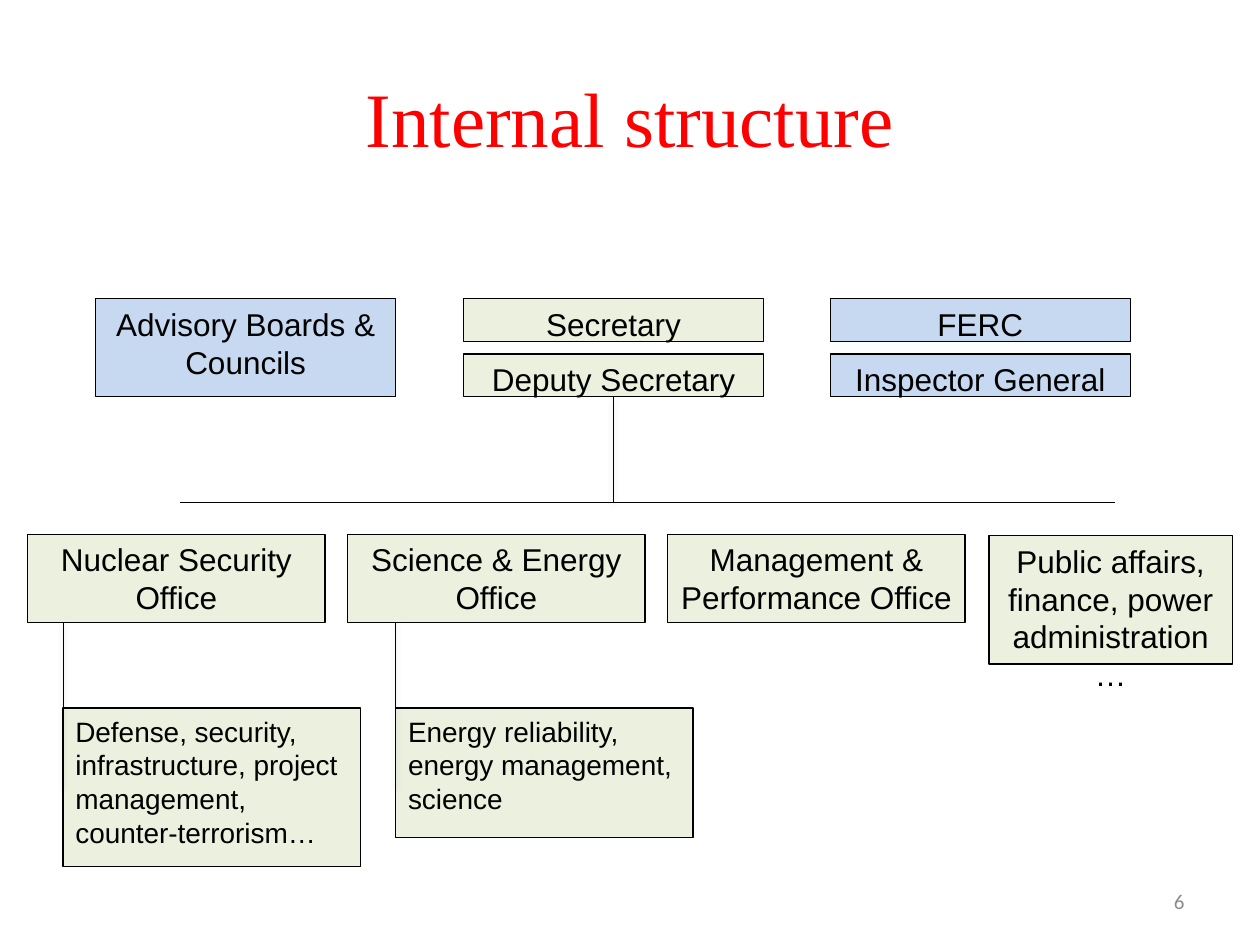
from lxml import etree
from pptx import Presentation
from pptx.dml.color import RGBColor
from pptx.enum import shapes, text
from pptx.oxml import parse_xml
from pptx.oxml.ns import nsdecls
from pptx.util import Inches, Pt

COLORS = {
    "title": "FF0000",
    "ink": "000000",
    "department": "EBF1DE",
    "independent": "C6D9F1",
    "number": "8C8C8C",
}
ALIGN = text.PP_ALIGN
ANCHOR = text.MSO_ANCHOR


class OrgChart:
    """Holds the fonts and colours of the chart and the slide it is drawn on."""

    body_font = "Arial"
    title_font = "Times New Roman"
    number_font = "Calibri"

    def __init__(self, slide):
        self.slide = slide

    def color(self, name):
        return RGBColor.from_string(COLORS[name])

    def set_words(self, shape, words, size, font, color, align, anchor):
        frame = shape.text_frame
        frame.text = words
        for name, value in {"word_wrap": True, "vertical_anchor": anchor}.items():
            setattr(frame, name, value)
        paragraph = frame.paragraphs[0]
        paragraph.alignment = align
        run_font = paragraph.runs[0].font
        for name, value in {"name": font, "size": Pt(size)}.items():
            setattr(run_font, name, value)
        run_font.color.rgb = self.color(color)

    def title(self, words):
        heading = self.slide.shapes.title
        place = {"left": 0.5, "top": 0.3, "width": 9, "height": 1.25}
        for name, value in place.items():
            setattr(heading, name, Inches(value))
        self.set_words(heading, words, 44, self.title_font, "title",
                       ALIGN.CENTER, ANCHOR.MIDDLE)

    def box(self, words, left, top, width, height, fill="department",
            size=18, align=ALIGN.CENTER):
        unit = self.slide.shapes.add_shape(
            shapes.MSO_SHAPE.RECTANGLE,
            Inches(left), Inches(top), Inches(width), Inches(height))
        unit.shadow.inherit = False
        unit.fill.solid()
        unit.fill.fore_color.rgb = self.color(fill)
        unit.line.color.rgb = self.color("ink")
        unit.line.width = Pt(0.75)
        self.set_words(unit, words, size, self.body_font, "ink", align,
                       ANCHOR.TOP)
        return unit

    def link(self, x1, y1, x2, y2):
        """Draw a thin line with a soft shadow below it."""
        line = self.slide.shapes.add_connector(
            shapes.MSO_CONNECTOR.STRAIGHT,
            Inches(x1), Inches(y1), Inches(x2), Inches(y2))
        line.line.color.rgb = self.color("ink")
        line.line.width = Pt(0.25)
        effects = parse_xml(f"<a:effectLst {nsdecls('a')}/>")
        shadow = etree.SubElement(
            effects, effects.tag.replace("effectLst", "outerShdw"),
            blurRad=str(Pt(3.1)), dist=str(Pt(1.6)), dir="5400000",
            rotWithShape="0")
        shade = etree.SubElement(
            shadow, effects.tag.replace("effectLst", "srgbClr"),
            val=COLORS["ink"])
        etree.SubElement(
            shade, effects.tag.replace("effectLst", "alpha"), val="38000")
        line._element.spPr.append(effects)
        return line

    def number(self, words):
        page = self.slide.shapes.add_textbox(
            Inches(7.17), Inches(6.95), Inches(2.33), Inches(0.4))
        self.set_words(page, words, 12, self.number_font, "number",
                       ALIGN.RIGHT, ANCHOR.MIDDLE)


def main():
    deck = Presentation()
    deck.slide_width, deck.slide_height = Inches(10), Inches(7.5)
    chart = OrgChart(deck.slides.add_slide(deck.slide_layouts[5]))
    chart.title("Internal structure")

    # Leadership: three columns, two of them split into two rows
    leader_width, row_height = 2.38, 0.34
    upper, lower = 2.37, 2.81
    advisory_left, secretary_left, independent_left = 0.76, 3.68, 6.59
    deputy = chart.box("Deputy Secretary", secretary_left, lower,
                       leader_width, row_height)
    chart.box("Secretary", secretary_left, upper, leader_width, row_height)
    for words, top in (("FERC", upper), ("Inspector General", lower)):
        chart.box(words, independent_left, top, leader_width, row_height,
                  "independent")
    chart.box("Advisory Boards & Councils", advisory_left, upper, leader_width,
              lower + row_height - upper, "independent")

    # Offices, evenly spaced
    office_left, office_top, office_gap = 0.22, 4.24, 0.18
    office_width, office_height = 2.36, 0.7
    offices = ("Nuclear Security Office", "Science & Energy Office",
               "Management & Performance Office")
    for column, words in enumerate(offices):
        chart.box(words, office_left + column * (office_width + office_gap),
                  office_top, office_width, office_height)
    chart.box("Public affairs, finance, power administration…",
              7.85, 4.25, 1.93, 1.02)

    # Duties hanging from the first two offices
    duties_top, branch_end = 5.62, 6.25
    duties = (
        ("Defense, security, infrastructure, project management, "
         "counter-terrorism…", 0.5, 1.26),
        ("Energy reliability, energy management, science", 3.14, 1.03),
    )
    defense, _ = [chart.box(words, left, duties_top, office_width, height,
                            size=16, align=ALIGN.LEFT)
                  for words, left, height in duties]
    defense_branch, _ = [chart.link(left, office_top + office_height,
                                    left, branch_end)
                         for _, left, _ in duties]
    defense_branch.end_connect(defense, 1)

    # Trunk from the leadership down to the office bar
    bar_y, trunk_x = 3.99, secretary_left + leader_width / 2
    trunk = chart.link(trunk_x, lower + row_height, trunk_x, bar_y)
    trunk.begin_connect(deputy, 2)
    chart.link(1.43, bar_y, 8.85, bar_y)

    chart.number("6")
    deck.save("out.pptx")


if __name__ == "__main__":
    main()
